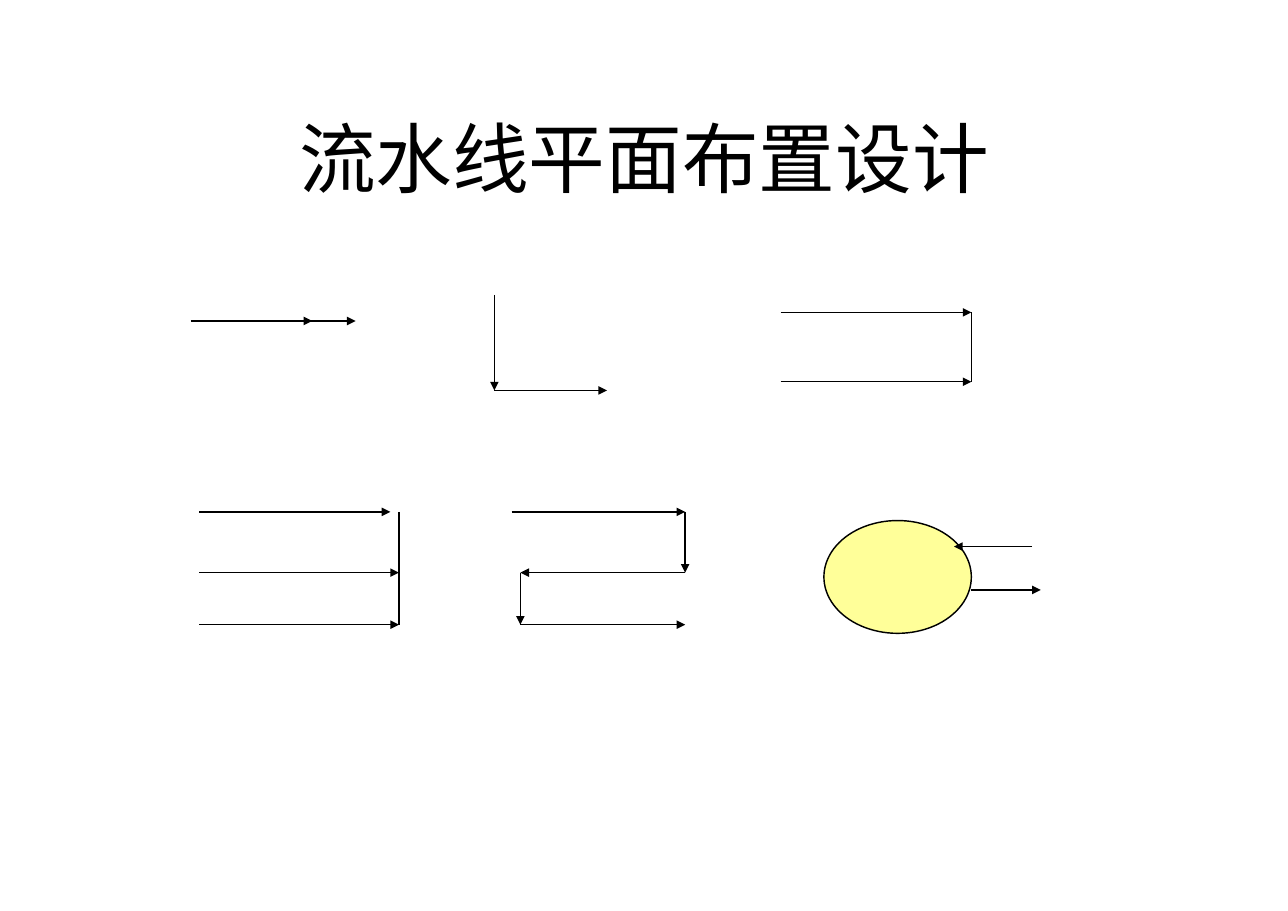
import itertools

import lxml.etree
import pptx
import pptx.dml.color
import pptx.enum.shapes
import pptx.enum.text
import pptx.oxml.ns
import pptx.util

Pt = pptx.util.Pt

COLORS = {"ink": "000000", "paper": "FFFFFF", "loop": "FFFF99"}
FONT = "Times New Roman"
SLIDE_SIZE = (891, 630)
TITLE = "流水线平面布置设计"
TITLE_BOX = (66.8, 56, 757.4, 105)
LOOP_BOX = (570, 360, 102, 78)

# Each route is a chain of points; every leg between two points is one line.
ARROW_ROUTES = {
    "straight, short": [(132, 222), (216, 222)],
    "straight, long": [(132, 222), (246, 222)],
    "L shape": [(342, 204), (342, 270), (420, 270)],
    "U shape, upper": [(540, 216), (672, 216)],
    "U shape, lower": [(540, 264), (672, 264)],
    "comb, top": [(138, 354), (270, 354)],
    "comb, middle": [(138, 396), (276, 396)],
    "comb, bottom": [(138, 432), (276, 432)],
    "snake": [(354, 354), (474, 354), (474, 396), (360, 396), (360, 432), (474, 432)],
    "loop, in": [(714, 378), (660, 378)],
    "loop, out": [(672, 408), (720, 408)],
}
PLAIN_ROUTES = {
    "U shape, side": [(672, 216), (672, 264)],
    "comb, spine": [(276, 354), (276, 432)],
}


def color(name):
    return pptx.dml.color.RGBColor.from_string(COLORS[name])


def add_title(slide):
    tf = slide.shapes.add_textbox(*map(Pt, TITLE_BOX)).text_frame
    tf.word_wrap = True
    tf.vertical_anchor = pptx.enum.text.MSO_ANCHOR.MIDDLE
    tf.margin_left = tf.margin_right = Pt(8.6)
    tf.margin_top = tf.margin_bottom = Pt(4.3)
    p = tf.paragraphs[0]
    p.text = TITLE
    p.alignment = pptx.enum.text.PP_ALIGN.CENTER
    p.font.name = FONT
    p.font.size = Pt(53)
    p.font.color.rgb = color("ink")


def style_line(line):
    line.color.rgb = color("ink")
    line.width = Pt(1)


def add_loop(slide):
    oval = pptx.enum.shapes.MSO_SHAPE.OVAL
    sp = slide.shapes.add_shape(oval, *map(Pt, LOOP_BOX))
    sp.shadow.inherit = False
    sp.fill.solid()
    sp.fill.fore_color.rgb = color("loop")
    style_line(sp.line)


def add_route(slide, points, arrow):
    qn = pptx.oxml.ns.qn
    straight = pptx.enum.shapes.MSO_CONNECTOR.STRAIGHT
    for start, end in itertools.pairwise(points):
        leg = slide.shapes.add_connector(straight, *map(Pt, start + end))
        style_line(leg.line)
        sp_pr = leg.element.spPr
        if arrow:
            lxml.etree.SubElement(sp_pr.find(qn("a:ln")), qn("a:tailEnd"), type="triangle")
        lxml.etree.SubElement(sp_pr, qn("a:effectLst"))


def main():
    prs = pptx.Presentation()
    prs.slide_width, prs.slide_height = map(Pt, SLIDE_SIZE)
    s = prs.slides.add_slide(prs.slide_layouts[6])
    s.background.fill.solid()
    s.background.fill.fore_color.rgb = color("paper")
    add_title(s)
    add_loop(s)
    for routes, arrow in ((ARROW_ROUTES, True), (PLAIN_ROUTES, False)):
        for points in routes.values():
            add_route(s, points, arrow)
    prs.save("out.pptx")


if __name__ == "__main__":
    main()
